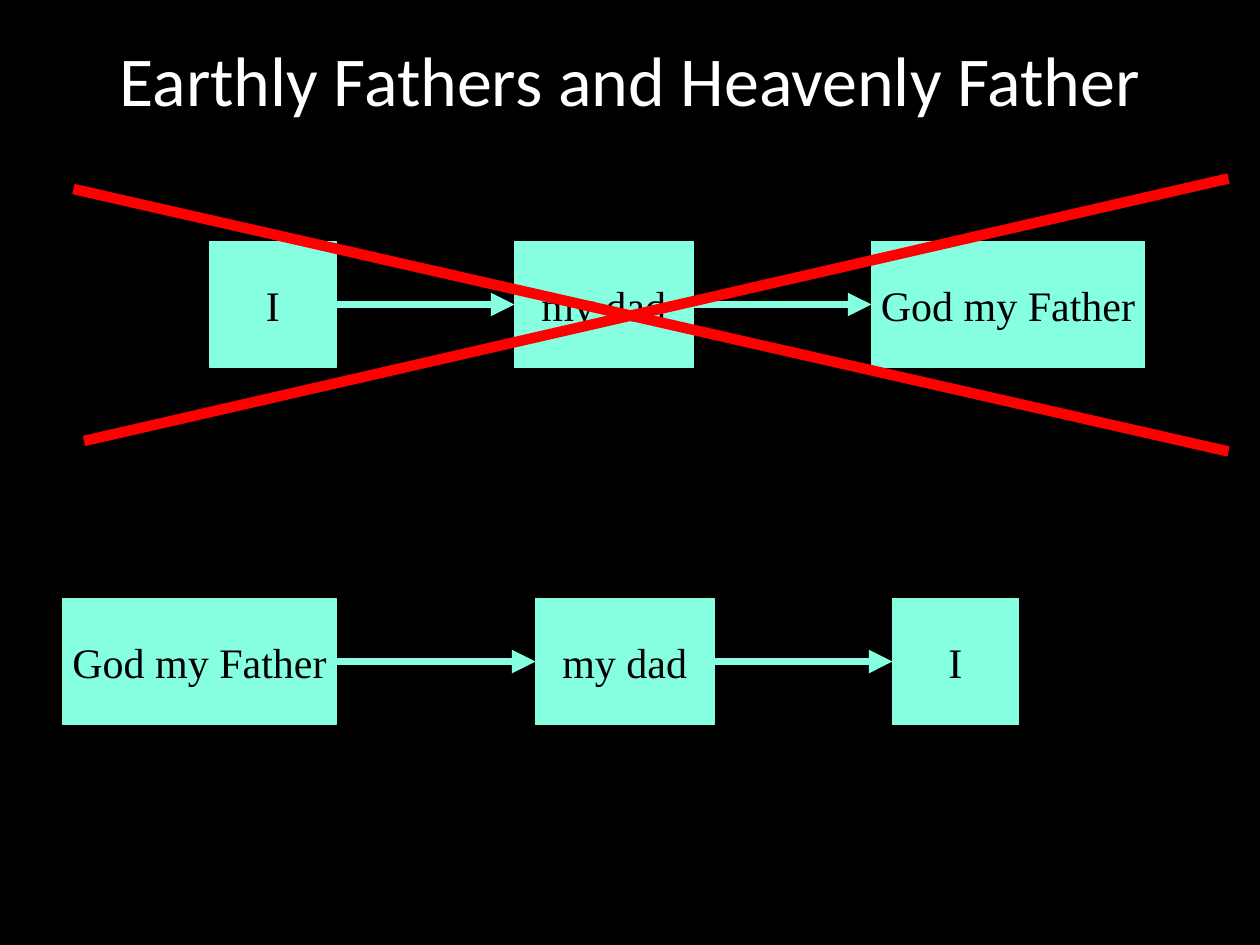
import itertools

import lxml.etree
import pptx
import pptx.dml.color
import pptx.enum.shapes
import pptx.enum.text
import pptx.oxml.ns
import pptx.util

PX = 9525
BLACK, WHITE, MINT, RED = "000000", "FFFFFF", "85FFE0", "FF0000"
LEFT, RIGHT = 1, 3


def color(hex_string):
    return pptx.dml.color.RGBColor.from_string(hex_string)


class SlidePainter:
    """Holds the style and the current slide, and draws each kind of element."""

    title_font, title_size = "Calibri", 40
    box_font, box_size = "Times New Roman", 24
    box_height = 96

    def __init__(self, slide):
        self.slide = slide
        slide.background.fill.solid()
        slide.background.fill.fore_color.rgb = color(BLACK)

    def label(self, shape, text, font, size, ink, wrap):
        frame = shape.text_frame
        frame.word_wrap = wrap
        frame.vertical_anchor = pptx.enum.text.MSO_ANCHOR.MIDDLE
        paragraph = frame.paragraphs[0]
        paragraph.text = text
        paragraph.alignment = pptx.enum.text.PP_ALIGN.CENTER
        paragraph.font.name = font
        paragraph.font.size = pptx.util.Pt(size)
        paragraph.font.color.rgb = color(ink)

    def title(self, text, width, height):
        box = self.slide.shapes.add_textbox(0, 0, width * PX, height * PX)
        self.label(box, text, self.title_font, self.title_size, WHITE, True)

    def box(self, text, left, top, width):
        box = self.slide.shapes.add_shape(
            pptx.enum.shapes.MSO_SHAPE.RECTANGLE,
            left * PX, top * PX, width * PX, self.box_height * PX)
        box.shadow.inherit = False
        box.fill.solid()
        box.fill.fore_color.rgb = color(MINT)
        box.line.color.rgb = color(MINT)
        box.line.width = pptx.util.Pt(0.75)
        self.label(box, text, self.box_font, self.box_size, BLACK, False)
        return box

    def line(self, start, end, ink, width):
        line = self.slide.shapes.add_connector(
            pptx.enum.shapes.MSO_CONNECTOR.STRAIGHT,
            *(value * PX for value in (*start, *end)))
        line.line.color.rgb = color(ink)
        line.line.width = pptx.util.Pt(width)
        lxml.etree.SubElement(line._element.spPr, pptx.oxml.ns.qn("a:effectLst"))
        return line

    def arrow(self, source, target):
        arrow = self.line((0, 0), (0, 0), MINT, 4.5)
        arrow.begin_connect(source, RIGHT)
        arrow.end_connect(target, LEFT)
        outline = arrow._element.spPr.find(pptx.oxml.ns.qn("a:ln"))
        lxml.etree.SubElement(outline, pptx.oxml.ns.qn("a:tailEnd"), type="triangle")

    def chain(self, top, items):
        boxes = [self.box(text, left, top, width) for text, left, width in items]
        for source, target in itertools.pairwise(boxes):
            self.arrow(source, target)


def main():
    deck = pptx.Presentation()
    deck.slide_width, deck.slide_height = 960 * PX, 720 * PX
    painter = SlidePainter(deck.slides.add_slide(deck.slide_layouts[6]))

    painter.title("Earthly Fathers and Heavenly Father", 960, 120)
    painter.chain(456, [("God my Father", 48, 208), ("my dad", 408, 136), ("I", 680, 96)])
    painter.chain(184, [("I", 160, 96), ("my dad", 392, 136), ("God my Father", 664, 208)])
    painter.line((56, 144), (936, 344), RED, 6)
    painter.line((64, 336), (936, 136), RED, 6)

    deck.save("out.pptx")


if __name__ == "__main__":
    main()
